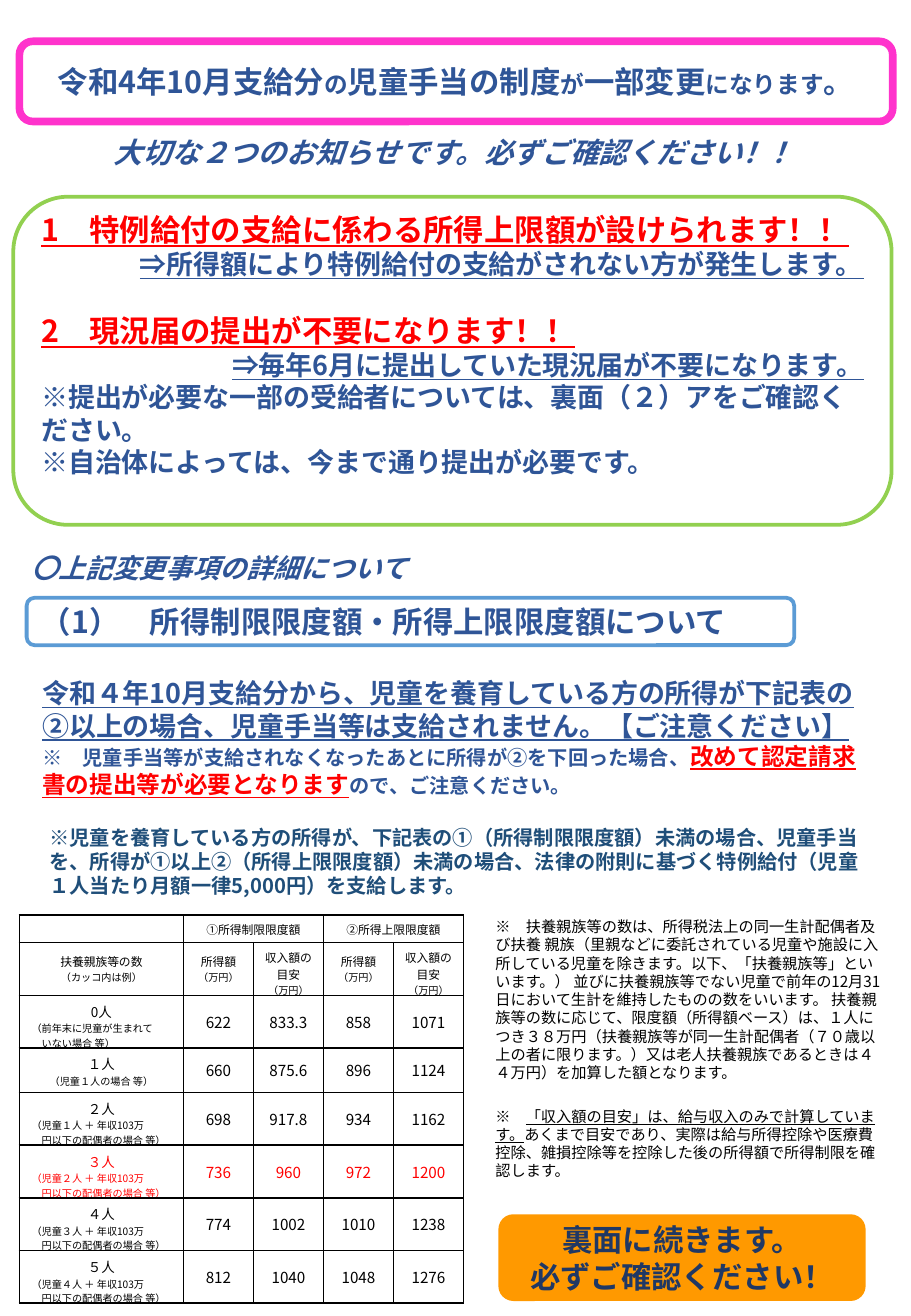
from dataclasses import dataclass
from lxml.etree import SubElement
from pptx import Presentation
from pptx.dml.color import RGBColor
from pptx.enum.shapes import MSO_SHAPE as Shape
from pptx.enum.text import MSO_ANCHOR as Anchor, PP_ALIGN as Align
from pptx.oxml.ns import qn
from pptx.util import Pt


@dataclass(frozen=True)
class Theme:
    font: str = "Noto Sans CJK JP"
    blue: str = "2F5597"
    navy: str = "203864"
    teal: str = "1F4E79"
    red: str = "FF0000"
    black: str = "000000"
    pink: str = "FF33CC"
    green: str = "92D050"
    sky: str = "5B9BD5"
    orange: str = "FF9900"
    heading: float = 18
    subheading: float = 17
    lead: float = 16
    accent: float = 14
    note: float = 12
    small: float = 9
    count: float = 8
    label: float = 7
    tiny: float = 6


THEME = Theme()


class Flyer:
    def __init__(self, presentation, theme):
        self.theme = theme
        self.slide = presentation.slides.add_slide(presentation.slide_layouts[6])

    def style(self, font, size=None, color=None, underline=None):
        if size:
            font.size = Pt(size)
        if color:
            font.color.rgb = RGBColor.from_string(color)
        if underline is not None:
            font.underline = underline

    def fill_text(self, frame, paragraphs, size, color, bold=False, italic=False, align=Align.LEFT):
        """Each paragraph is a dict: text (a string or styled pieces) and its own settings."""
        for index, item in enumerate(paragraphs):
            paragraph = frame.add_paragraph() if index else frame.paragraphs[0]
            paragraph.alignment = item.get("align", align)
            paragraph.space_before = Pt(item.get("before", 0))
            if "spacing" in item:
                paragraph.line_spacing = item["spacing"]
            properties = paragraph._p.get_or_add_pPr()
            properties.set("marL", str(Pt(item.get("indent", 0))))
            properties.set("indent", "0")
            font = paragraph.font
            font.name, font.bold, font.italic = self.theme.font, bold, italic
            self.style(font, item.get("size", size), item.get("color", color), item.get("underline"))
            SubElement(font._element, qn("a:ea"), typeface=self.theme.font)
            pieces = item["text"]
            if isinstance(pieces, str):
                pieces = [(pieces, {})] if pieces else []
            for text, own in pieces:
                run = paragraph.add_run()
                run.text = text
                self.style(run.font, **own)

    def text(self, box, paragraphs, size, color, anchor=Anchor.TOP, **options):
        frame = self.slide.shapes.add_textbox(*map(Pt, box)).text_frame
        frame.word_wrap = True
        frame.vertical_anchor = anchor
        self.fill_text(frame, paragraphs, size, color, **options)

    def panel(self, box, paragraphs, size, color, line, width, fill=None, bottom=3.6, **options):
        shape = self.slide.shapes.add_shape(Shape.ROUNDED_RECTANGLE, *map(Pt, box))
        shape.shadow.inherit = False
        if fill:
            shape.fill.solid()
            shape.fill.fore_color.rgb = RGBColor.from_string(fill)
        else:
            shape.fill.background()
        shape.line.color.rgb = RGBColor.from_string(line)
        shape.line.width = Pt(width)
        frame = shape.text_frame
        frame.word_wrap = True
        frame.vertical_anchor = Anchor.MIDDLE
        frame.margin_bottom = Pt(bottom)
        self.fill_text(frame, paragraphs, size, color, bold=True, **options)

    def cell(self, cell, paragraphs, size, color, side):
        cell.margin_left = cell.margin_right = Pt(side)
        cell.margin_top = cell.margin_bottom = Pt(3.6)
        cell.vertical_anchor = Anchor.MIDDLE
        properties = cell._tc.get_or_add_tcPr()
        for edge in ("lnL", "lnR", "lnT", "lnB"):
            border = SubElement(properties, qn(f"a:{edge}"), w=str(Pt(1)))
            paint = SubElement(border, qn("a:solidFill"))
            SubElement(paint, qn("a:srgbClr"), val=self.theme.black)
        cell.fill.background()
        self.fill_text(cell.text_frame, paragraphs, size, color, align=Align.CENTER)

    def table(self, box, widths, heights, rows, merges):
        table = self.slide.shapes.add_table(len(rows), len(widths), *map(Pt, box)).table
        table.first_row = table.horz_banding = False
        for column, width in zip(table.columns, widths):
            column.width = Pt(width)
        for row, height in zip(table.rows, heights):
            row.height = Pt(height)
        for r, (color, cells) in enumerate(rows):
            for c, paragraphs in enumerate(cells):
                side = 7.2 if c < 2 or r == 0 or (r == 1 and c == 3) else 3.6
                self.cell(table.cell(r, c), paragraphs, self.theme.label, color, side)
        for start, end in merges:
            table.cell(*start).merge(table.cell(*end))


def income_rows(theme):
    def caption(title, note):
        return [{"text": title}, {"text": note, "size": theme.tiny}]

    blank = [{"text": ""}]
    limits = [caption("所得額", "（万円）"), caption("収入額の目安", "（万円）")]
    rows = [
        (theme.black, [blank, [{"text": "①所得制限限度額"}], blank, [{"text": "②所得上限限度額"}], blank]),
        (theme.black, [caption("扶養親族等の数", "（カッコ内は例）")] + limits * 2),
    ]
    spouse = "円以下の配偶者の場合 等）"
    families = [
        ("0人", ["（前年末に児童が生まれて", "いない場合 等）"], "622 833.3 858 1071"),
        ("１人", ["（児童１人の場合 等）"], "660 875.6 896 1124"),
        ("２人", ["（児童１人 ＋ 年収103万", spouse], "698 917.8 934 1162"),
        ("３人", ["（児童２人 ＋ 年収103万", spouse], "736 960 972 1200"),
        ("４人", ["（児童３人 ＋ 年収103万", spouse], "774 1002 1010 1238"),
        ("５人", ["（児童４人 ＋ 年収103万", spouse], "812 1040 1048 1276"),
    ]
    for count, notes, amounts in families:
        align = Align.LEFT if len(notes) > 1 else Align.CENTER
        label = [{"text": count, "size": theme.count}]
        label += [{"text": note, "size": theme.tiny, "align": align, "indent": theme.tiny * line}
                  for line, note in enumerate(notes)]
        values = [[{"text": amount, "size": theme.small}] for amount in amounts.split()]
        rows.append((theme.red if count == "３人" else theme.black, [label] + values))
    return rows


def main():
    presentation = Presentation()
    presentation.slide_width, presentation.slide_height = Pt(540), Pt(779.76)
    theme = THEME
    flyer = Flyer(presentation, theme)
    minor = {"size": theme.accent}

    # Title and opening line
    title = [("令和4年10月支給分", {}), ("の", minor), ("児童手当の制度", {}), ("が", minor),
             ("一部変更", {}), ("になります", minor), ("。", {})]
    flyer.panel((11.5, 24.5, 517.7, 47.5), [{"text": title}], theme.heading, theme.blue,
                theme.pink, 4.5, align=Align.CENTER)
    flyer.text((60.5, 80.6, 463.7, 33.8),
               [{"text": "大切な２つのお知らせです。必ずご確認ください！！", "spacing": 0.8}],
               theme.subheading, theme.blue, bold=True, italic=True)

    # The two changes
    point = {"size": theme.heading, "color": theme.red, "underline": True}
    result = {"align": Align.RIGHT, "underline": True}
    flyer.panel((7.9, 116.6, 520.6, 194.4), [
        {"text": "1　特例給付の支給に係わる所得上限額が設けられます！！", **point},
        {"text": "⇒所得額により特例給付の支給がされない方が発生します。", **result},
        {"text": "2　現況届の提出が不要になります！！", "before": 19, **point},
        {"text": "⇒毎年6月に提出していた現況届が不要になります。", **result},
        {"text": "※提出が必要な一部の受給者については、裏面（２）アをご確認ください。"},
        {"text": "※自治体によっては、今まで通り提出が必要です。"},
    ], theme.lead, theme.blue, theme.green, 2.25, bottom=22.6)

    # Details of the income limits
    flyer.text((11.5, 325.4, 274.3, 24.5), [{"text": "〇上記変更事項の詳細について", "spacing": 0.9}],
               theme.lead, theme.blue, bold=True, italic=True)
    flyer.panel((15.8, 354.2, 455, 28.1), [{"text": "（1）　所得制限限度額・所得上限限度額について"}],
                theme.heading, theme.blue, theme.sky, 2.25)
    renewal = {"size": theme.accent, "color": theme.red, "underline": True}
    flyer.text((18, 390.2, 501, 93.6), [
        {"text": "令和４年10月支給分から、児童を養育している方の所得が下記表の②以上の場合、"
                 "児童手当等は支給されません。【ご注意ください】", "underline": True},
        {"text": [("※　児童手当等が支給されなくなったあとに所得が②を下回った場合、", {}),
                  ("改めて認定請求書の提出等が必要となります", renewal),
                  ("ので、ご注意ください。", {})], "size": theme.note},
    ], theme.lead, theme.blue, anchor=Anchor.MIDDLE, bold=True)
    flyer.text((22.3, 485.3, 501.8, 51.1), [
        {"text": "※児童を養育している方の所得が、下記表の①（所得制限限度額）未満の場合、児童手当を、"
                 "所得が①以上②（所得上限限度額）未満の場合、法律の附則に基づく特例給付"
                 "（児童１人当たり月額一律5,000円）を支給します。"}], theme.note, theme.teal, bold=True)

    # Income table
    flyer.table((11.5, 542.2, 263.2, 229.7), [97.2] + [41.5] * 4,
                [16.3, 31.2, 31.2, 26.4] + [31.2] * 4, income_rows(theme),
                [((0, 1), (0, 2)), ((0, 3), (0, 4))])

    # Notes beside the table
    flyer.text((286.6, 540, 242.6, 116.6), [
        {"text": "※　扶養親族等の数は、所得税法上の同一生計配偶者及び扶養 親族（里親などに委託されている児童や"
                 "施設に入所している児童を除きます。以下、「扶養親族等」といいます。） 並びに扶養親族等でない児童で"
                 "前年の12月31日において生計を維持したものの数をいいます。 扶養親族等の数に応じて、限度額"
                 "（所得額ベース）は、１人につき３８万円（扶養親族等が同一生計配偶者（７０歳以上の者に限ります。）"
                 "又は老人扶養親族であるときは４４万円）を加算した額となります。"}], theme.small, theme.black)
    flyer.text((286.6, 652.3, 240.5, 51.1), [
        {"text": [("※　", {}), ("「収入額の目安」は、給与収入のみで計算しています。", {"underline": True}),
                  ("あくまで目安であり、実際は給与所得控除や医療費控除、雑損控除等を控除した後の"
                   "所得額で所得制限を確認します。", {})]}], theme.small, theme.black)

    # Continued overleaf
    flyer.panel((295.9, 720, 216.7, 50.4), [{"text": "裏面に続きます。"}, {"text": "必ずご確認ください！"}],
                theme.heading, theme.navy, theme.orange, 1, fill=theme.orange, align=Align.CENTER)
    presentation.save("out.pptx")


if __name__ == "__main__":
    main()
